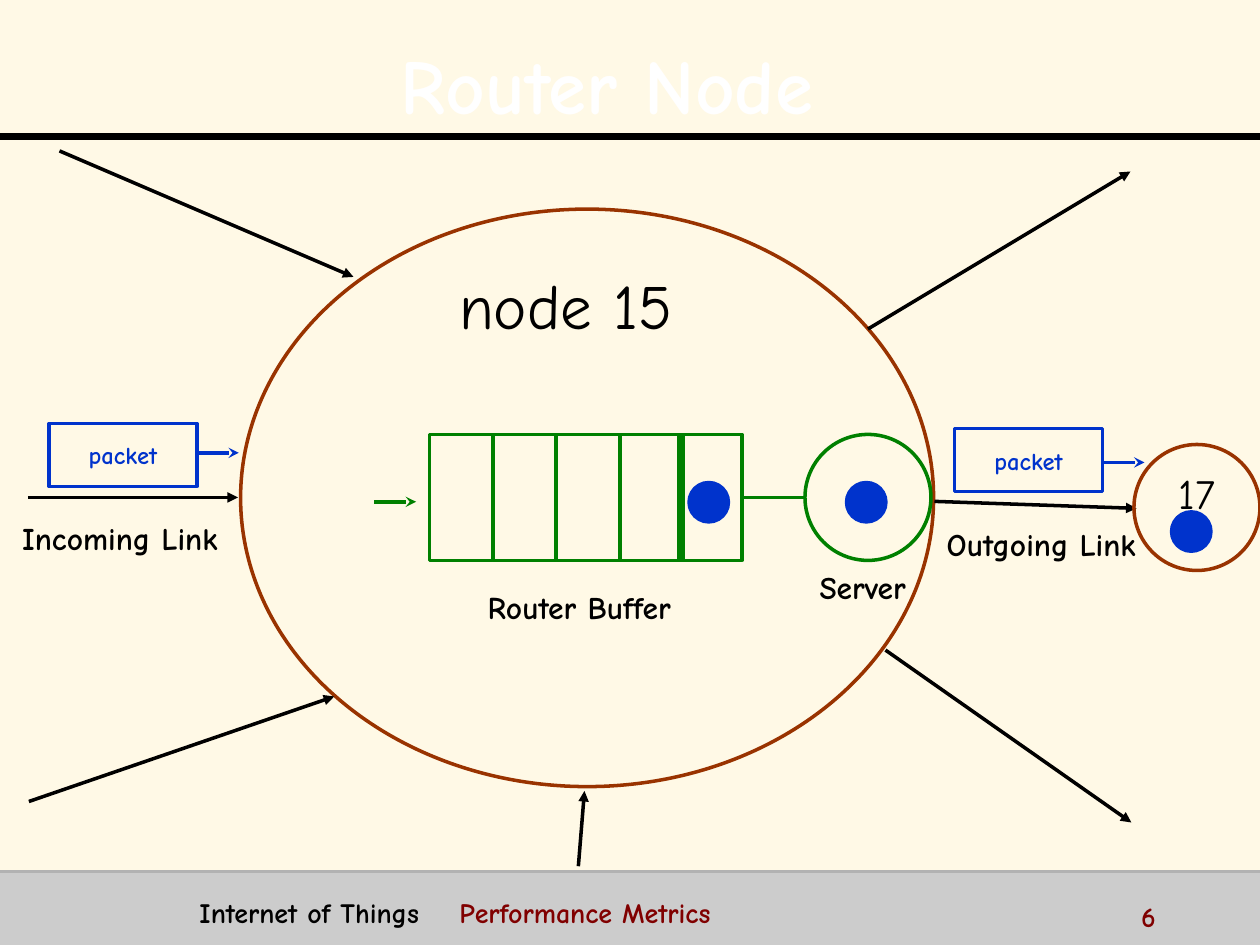
"""Build the Router Node queueing diagram slide."""
from lxml import etree
from pptx import Presentation
from pptx.dml.color import RGBColor
from pptx.enum.shapes import MSO_CONNECTOR, MSO_SHAPE
from pptx.enum.text import MSO_ANCHOR, PP_ALIGN
from pptx.oxml.ns import qn
from pptx.util import Pt

RECTANGLE, OVAL = MSO_SHAPE.RECTANGLE, MSO_SHAPE.OVAL
STRAIGHT = MSO_CONNECTOR.STRAIGHT
MIDDLE, TOP = MSO_ANCHOR.MIDDLE, MSO_ANCHOR.TOP
LEFT, CENTER = PP_ALIGN.LEFT, PP_ALIGN.CENTER

BLACK, WHITE, CREAM, GRAY, SILVER = "000000", "FFFFFF", "FFF9E6", "CCCCCC", "B2B2B2"
BROWN, GREEN, BLUE, MAROON = "993300", "008000", "0033CC", "800000"


def color(value):
    return RGBColor.from_string(value)


def set_values(target, values):
    for name, value in values.items():
        setattr(target, name, value)


class Diagram:
    font_name = "Comic Neue"
    line_width = 2

    def __init__(self, slide):
        self.slide = slide
        slide.background.fill.solid()
        slide.background.fill.fore_color.rgb = color(CREAM)

    def set_text(self, shape, runs, size, bold=True, align=CENTER, anchor=MIDDLE,
                 insets=(0, 0, 0, 0), tab=None):
        frame = shape.text_frame
        set_values(frame, {"word_wrap": True, "vertical_anchor": anchor})
        sides = ("margin_left", "margin_top", "margin_right", "margin_bottom")
        set_values(frame, dict(zip(sides, map(Pt, insets))))
        paragraph = frame.paragraphs[0]
        paragraph.alignment = align
        if tab:
            tabs = etree.SubElement(paragraph._p.get_or_add_pPr(), qn("a:tabLst"))
            etree.SubElement(tabs, qn("a:tab"), pos=str(Pt(tab)), algn="l")
        for text, text_color in runs:
            run = paragraph.add_run()
            run.text = text
            set_values(run.font, {"name": self.font_name, "size": Pt(size), "bold": bold})
            run.font.color.rgb = color(text_color)
        return paragraph

    def title(self, text, box):
        shape = self.slide.shapes.title
        set_values(shape, dict(zip(("left", "top", "width", "height"), map(Pt, box))))
        paragraph = self.set_text(shape, [(text, WHITE)], 44, insets=(7.2, 3.6, 21.6, 3.6))
        paragraph.line_spacing = 1.1
        effects = etree.Element(qn("a:effectLst"))
        shadow = etree.SubElement(effects, qn("a:outerShdw"), dist=str(Pt(2)), dir="2700000")
        etree.SubElement(shadow, qn("a:srgbClr"), val=BLACK)
        paragraph.runs[0].font._element.find(qn("a:solidFill")).addnext(effects)

    def shape(self, kind, box, line=None, fill=None):
        shape = self.slide.shapes.add_shape(kind, *map(Pt, box))
        shape.shadow.inherit = False
        if fill:
            shape.fill.solid()
            shape.fill.fore_color.rgb = color(fill)
        else:
            shape.fill.background()
        if line:
            shape.line.color.rgb = color(line)
            shape.line.width = Pt(self.line_width)
        else:
            shape.line.fill.background()
        return shape

    def text(self, box, runs, size, **options):
        textbox = self.slide.shapes.add_textbox(*map(Pt, box))
        self.set_text(textbox, runs, size, **options)

    def line(self, ends, line_color, width=line_width, head=None):
        connector = self.slide.shapes.add_connector(STRAIGHT, *map(Pt, ends))
        connector.line.color.rgb = color(line_color)
        connector.line.width = Pt(width)
        properties = connector._element.spPr
        if head:
            etree.SubElement(properties.find(qn("a:ln")), qn("a:tailEnd"), type=head)
        etree.SubElement(properties, qn("a:effectLst"))

    def packet(self, left, top, arrow_y):
        box = self.shape(RECTANGLE, (left, top, 84.5, 36), BLUE)
        self.set_text(box, [("packet", BLUE)], 14)
        self.line((left + 84.5, arrow_y, left + 108.5, arrow_y), BLUE, head="stealth")


def main():
    presentation = Presentation()
    set_values(presentation, {"slide_width": Pt(720), "slide_height": Pt(540)})
    diagram = Diagram(presentation.slides.add_slide(presentation.slide_layouts[5]))

    diagram.shape(RECTANGLE, (0, 498, 720, 42), fill=GRAY)
    diagram.line((0, 78, 720, 78), BLACK, width=4)
    diagram.line((0, 498, 720, 498), SILVER)
    diagram.title("Router Node", (48, 6, 612, 78))

    diagram.shape(OVAL, (137.5, 119.5, 396, 330), BROWN)
    links = [
        (534, 286.5, 649.5, 290.5), (496, 188, 646, 98), (506, 371.5, 646.5, 470),
        (16, 284.25, 136, 284.25), (34, 86.25, 202, 158.25), (16.5, 458, 191, 398),
        (330.5, 495, 334, 452),
    ]
    for ends in links:
        diagram.line(ends, BLACK, head="triangle")

    cell_lefts = [245.5 + 36.25 * index for index in range(4)] + [388]
    for left in cell_lefts:
        diagram.shape(RECTANGLE, (left, 248.25, 36, 72), GREEN)
    diagram.shape(OVAL, (460, 248.25, 72, 72), GREEN)
    diagram.line((424, 284.25, 460, 284.25), GREEN)
    diagram.line((213.75, 286.75, 237.75, 286.75), GREEN, head="stealth")

    next_node = diagram.shape(OVAL, (648, 254, 72, 72), BROWN)
    diagram.set_text(next_node, [("17", BLACK)], 24, bold=False, insets=(0, 0, 0, 17))
    diagram.packet(28, 242, 258.75)
    diagram.packet(545.5, 245, 264.25)

    diagram.text((259, 134.5, 145.5, 73.5), [("node 15", BLACK)], 36, bold=False,
                 insets=(0, 5, 17, 0))
    labels = [
        ("Incoming Link", 5.5, 292.5, 126), ("Outgoing Link", 532, 296, 126),
        ("Router Buffer", 268, 332, 126), ("Server", 454, 320.25, 78),
    ]
    for label, left, top, width in labels:
        diagram.text((left, top, width, 30), [(label, BLACK)], 18)

    for left, top in [(393.75, 275.75), (483.75, 275.75), (669.5, 292.5)]:
        diagram.shape(OVAL, (left, top, 22.5, 22.5), BLUE, BLUE)

    footer = {"align": LEFT, "anchor": TOP}
    diagram.text((645, 510.5, 72, 18), [("6", MAROON)], 16, insets=(7.2, 3.6, 7.2, 3.6), **footer)
    diagram.text((101.5, 508.25, 524, 22.5),
                 [("Internet of Things", BLACK), ("\tPerformance Metrics", MAROON)],
                 16, insets=(12.5, 3.6, 7.2, 3.6), tab=148.5, **footer)
    presentation.save("out.pptx")


if __name__ == "__main__":
    main()
